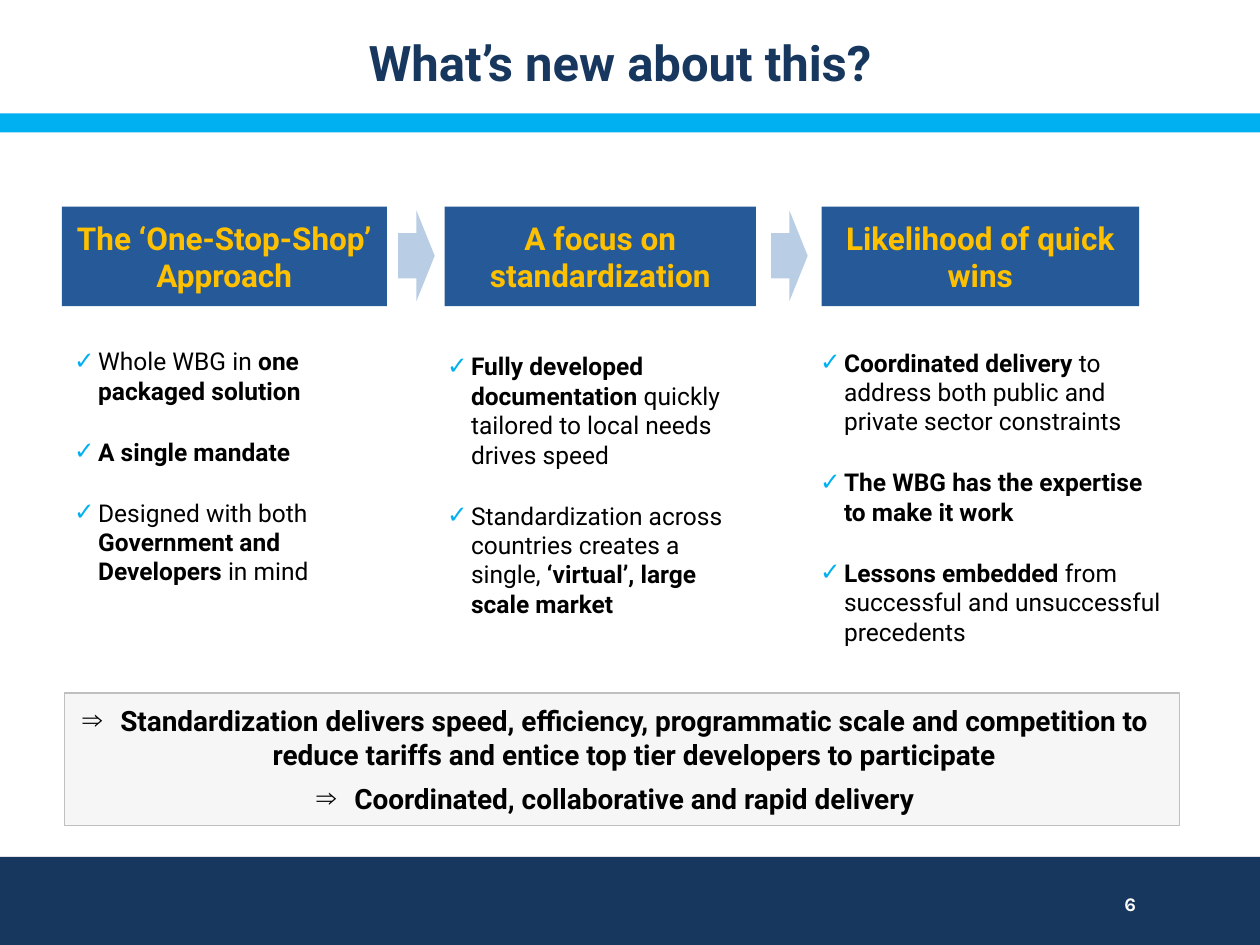
from pptx import Presentation
from pptx.dml.color import RGBColor
from pptx.enum.shapes import MSO_SHAPE
from pptx.enum.text import MSO_ANCHOR, PP_ALIGN
from pptx.oxml.ns import qn
from pptx.util import Inches, Pt
from lxml import etree

RECT = MSO_SHAPE.RECTANGLE
ARROW = MSO_SHAPE.RIGHT_ARROW
MIDDLE = MSO_ANCHOR.MIDDLE
CENTER = PP_ALIGN.CENTER

HUES = {
    "navy": "17375E", "blue": "255997", "sky": "00B0F0", "pale": "B9CDE5",
    "gold": "FFC000", "gray": "F2F2F2", "edge": "BFBFBF",
    "white": "FFFFFF", "black": "000000",
}

HEADS = [
    (0.49, 2.58, "The ‘One-Stop-Shop’ Approach"),
    (3.53, 2.47, "A focus on standardization"),
    (6.52, 2.52, "Likelihood of quick wins"),
]

LISTS = [
    ((0.49, 2.7, 2.68, 2.02), [
        [("Whole WBG in ", False), ("one packaged solution", True)],
        [("A single mandate", True)],
        [("Designed with both ", False), ("Government and Developers ", True),
         ("in mind", False)],
    ]),
    ((3.45, 2.74, 2.63, 2.24), [
        [("Fully developed documentation ", True),
         ("quickly tailored to local needs drives speed", False)],
        [("Standardization across countries creates a single, ", False),
         ("‘virtual’, large scale market", True)],
    ]),
    ((6.41, 2.71, 2.95, 2.49), [
        [("Coordinated delivery ", True),
         ("to address both public and private sector constraints", False)],
        [("The WBG has the expertise to make it work", True)],
        [("Lessons embedded ", True),
         ("from successful and unsuccessful precedents", False)],
    ]),
]

CLAIMS = [
    [("Standardization delivers speed, efficiency, programmatic scale and "
      "competition to reduce tariffs and entice top tier developers to "
      "participate", True)],
    [("Coordinated, collaborative and rapid delivery", True)],
]


def color(name):
    return RGBColor.from_string(HUES[name])


def style(font, size, hue, bold=True, face="Roboto"):
    font.name = face
    font.size = Pt(size)
    font.bold = bold
    font.color.rgb = color(hue)


def label(frame, text, size, hue, face="Roboto"):
    frame.text = text
    frame.word_wrap = True
    frame.vertical_anchor = MIDDLE
    para = frame.paragraphs[0]
    para.alignment = CENTER
    style(para.runs[0].font, size, hue, face=face)


def block(slide, kind, box, hue):
    shape = slide.shapes.add_shape(kind, *map(Inches, box))
    shape.shadow.inherit = False
    shape.fill.solid()
    shape.fill.fore_color.rgb = color(hue)
    shape.line.fill.background()
    return shape


def bullet(para, mark, indent, hue):
    props = para._p.get_or_add_pPr()
    props.set("marL", str(Inches(indent)))
    props.set("indent", str(-Inches(indent)))
    tint = etree.SubElement(props, qn("a:buClr"))
    etree.SubElement(tint, qn("a:srgbClr"), val=HUES[hue])
    etree.SubElement(props, qn("a:buFont"), typeface="Arial")
    etree.SubElement(props, qn("a:buChar"), char=mark)


def points(frame, items, mark, indent, hue, size, after, align=None):
    frame.word_wrap = True
    for i, parts in enumerate(items):
        para = frame.add_paragraph() if i else frame.paragraphs[0]
        bullet(para, mark, indent, hue)
        para.alignment = align
        para.space_before = Pt(6 if i else 0)
        para.space_after = Pt(after)
        for text, bold in parts:
            run = para.add_run()
            run.text = text
            style(run.font, size, "black", bold)


def heading(slide):
    title = slide.shapes.title
    title.left, title.top = Inches(0.67), Inches(0.18)
    title.width, title.height = Inches(8.5), Inches(0.62)
    label(title.text_frame, "What’s new about this?", 28, "navy")
    block(slide, RECT, (0, 0.9, 10, 0.15), "sky")


def steps(slide):
    for left, width, text in HEADS:
        shape = block(slide, RECT, (left, 1.64, width, 0.79), "blue")
        label(shape.text_frame, text, 18, "gold")
    for left in (3.16, 6.12):
        block(slide, ARROW, (left, 1.67, 0.29, 0.72), "pale")


def lists(slide):
    for box, items in LISTS:
        text = slide.shapes.add_textbox(*map(Inches, box))
        points(text.text_frame, items, "✓", 0.19, "sky", 14, 12)


def summary(slide):
    panel = block(slide, RECT, (0.51, 5.5, 8.85, 1.05), "gray")
    tint = panel.fill._xPr.find(qn("a:solidFill"))[0]
    etree.SubElement(tint, qn("a:alpha"), val="69000")
    panel.line.color.rgb = color("edge")
    panel.line.width = Pt(0.75)
    frame = panel.text_frame
    frame.vertical_anchor = MIDDLE
    frame.margin_right = Inches(0.2)
    points(frame, CLAIMS, "⇒", 0.3, "black", 16, 0, CENTER)


def footer(slide):
    block(slide, RECT, (0, 6.8, 10, 0.7), "navy")
    box = slide.shapes.add_textbox(*map(Inches, (7.94, 7.02, 2.06, 0.31)))
    label(box.text_frame, "6", 11, "white", "Karla")


def main():
    deck = Presentation()
    deck.slide_width, deck.slide_height = Inches(10), Inches(7.5)
    slide = deck.slides.add_slide(deck.slide_layouts[5])
    heading(slide)
    steps(slide)
    lists(slide)
    summary(slide)
    footer(slide)
    deck.save("out.pptx")


if __name__ == "__main__":
    main()
